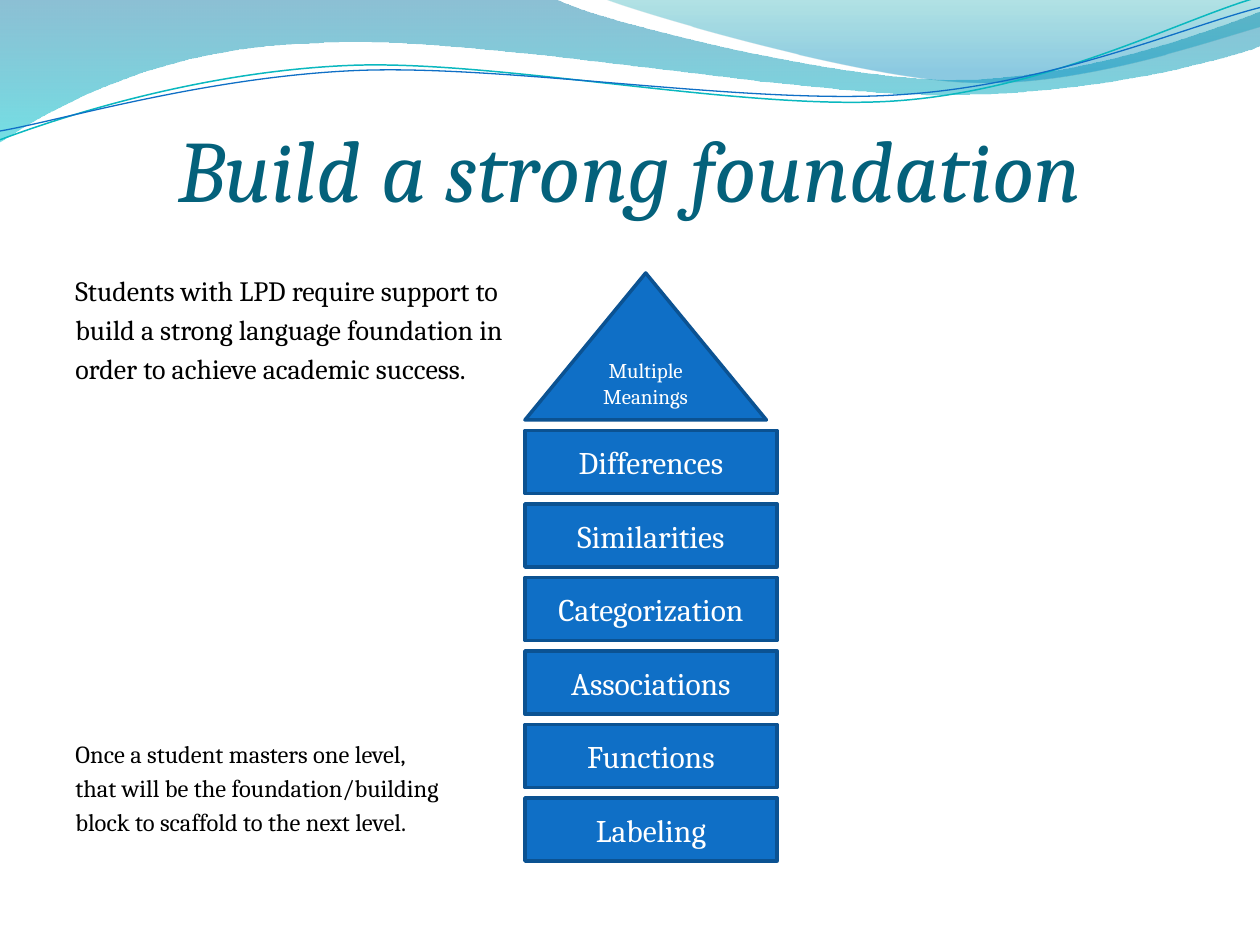
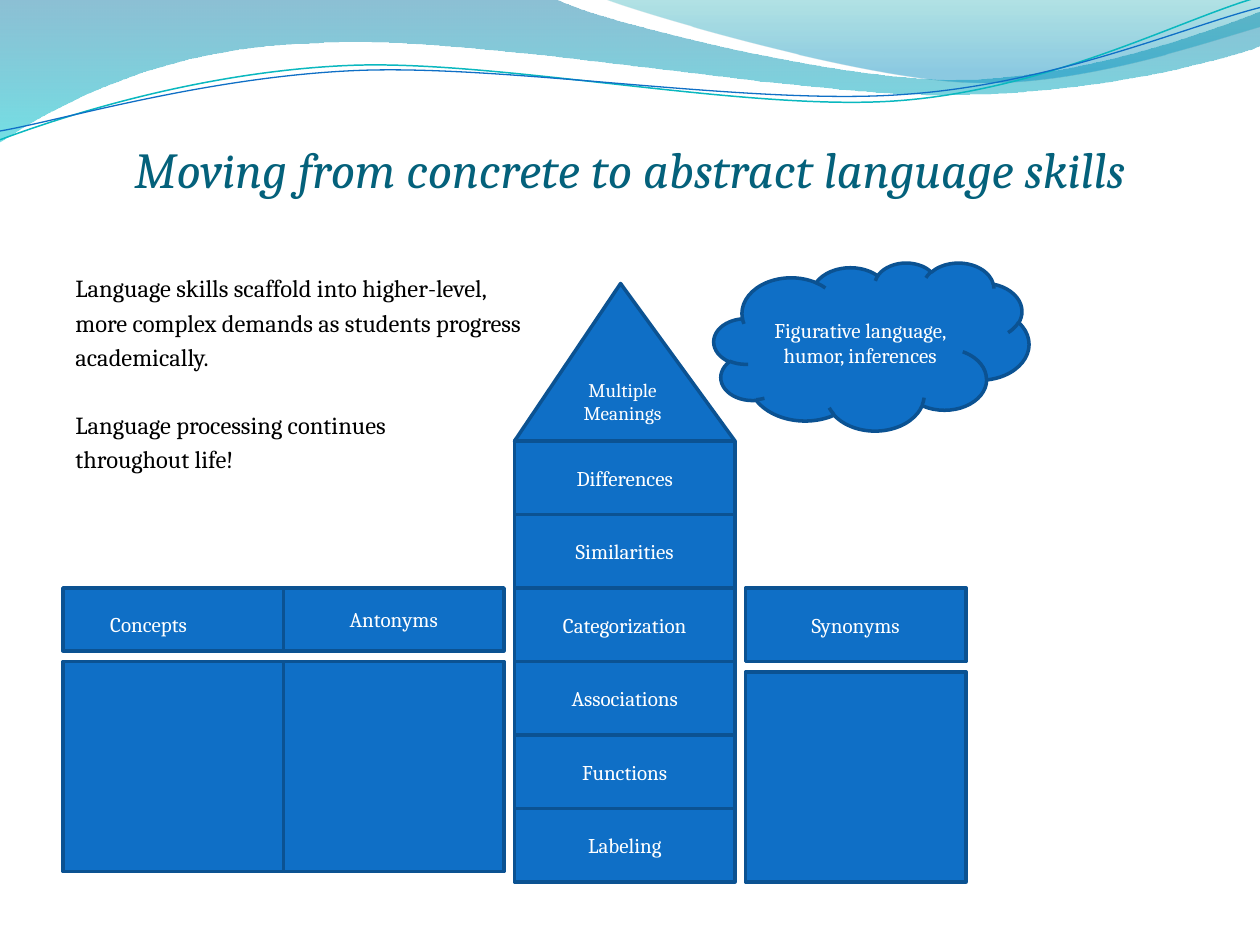
from pptx import Presentation
from pptx.dml.color import RGBColor
from pptx.enum.shapes import MSO_SHAPE
from pptx.enum.text import MSO_ANCHOR, PP_ALIGN
from pptx.oxml.ns import qn
from pptx.util import Inches, Pt
from lxml.etree import SubElement

COLORS = {
    "title": "04617B", "text": "000000", "label": "FFFFFF",
    "block": "0F6FC6", "edge": "0B5292",
    "band_top": "0074A1", "band_end": "00C6CF",
    "crest_top": "00A1A9", "crest_end": "008BBF",
    "teal_wave": "0AB8BF", "blue_wave": "0F6FC6",
}
FONT = "Cambria"
SLIDE_W, SLIDE_H = Inches(10), Inches(7.5)
CELL = SLIDE_W // 120  # the grid has 120 columns and 90 rows
LEVELS = ["Differences", "Similarities", "Categorization",
          "Associations", "Functions", "Labeling"]

# Outlines in inches: a start point, then lines (2 numbers) and cubic curves (6)
BAND = [(0, 0), (4.4, -0.01), (4.76, 0.17, 6.64, 0.63, 7.58, 0.63),
        (8.53, 0.63, 9.58, 0.26, 10, 0.09), (10.01, 0.36),
        (9.83, 0.44, 8.7, 0.76, 7.46, 0.75), (6.22, 0.75, 3.82, 0.28, 2.57, 0.34),
        (1.29, 0.36, 0.46, 0.83, -0.01, 1.13)]
CREST = [(4.79, -0.01), (5.09, 0.11, 6.82, 0.62, 7.69, 0.65),
         (8.56, 0.69, 9.61, 0.32, 10, 0.21), (10, 0)]
TEAL_WAVE = [(0, 1.11), (0.48, 0.93, 1.58, 0.57, 2.77, 0.52),
             (3.95, 0.47, 5.93, 0.89, 7.13, 0.8), (8.33, 0.71, 9.38, 0.15, 9.98, -0.02)]
BLUE_WAVE = [(0, 1.04), (0.47, 0.96, 1.64, 0.61, 2.83, 0.56),
             (4.03, 0.51, 5.97, 0.84, 7.17, 0.75), (8.36, 0.67, 9.41, 0.21, 10, 0.06)]


def rgb(name):
    return RGBColor.from_string(COLORS[name])


def cells(*counts):
    return [round(count * CELL) for count in counts]


def style(paragraph, size, color, align=PP_ALIGN.LEFT):
    paragraph.alignment = align
    paragraph.font.name = FONT
    paragraph.font.size = Pt(size)
    paragraph.font.color.rgb = rgb(color)


# Header waves
def add_outline(slide, outline, close):
    start, *rest = [(Inches(x), Inches(y)) for segment in outline
                    for x, y in zip(segment[::2], segment[1::2])]
    builder = slide.shapes.build_freeform(*start)
    builder.add_line_segments(rest, close=close)
    shape = builder.convert_to_shape()
    shape.shadow.inherit = False
    # Merge each curve's three straight steps into one cubic curve
    steps = iter(list(shape._element.spPr.iter(qn("a:lnTo"))))
    for segment in outline[1:]:
        curve = next(steps)
        if len(segment) == 6:
            curve.tag = qn("a:cubicBezTo")
            for step in (next(steps), next(steps)):
                curve.append(step[0])
                step.getparent().remove(step)
    return shape


def add_veil(slide, outline, stops):
    """Add an area with a downward gradient of (position, colour, opacity %)."""
    veil = add_outline(slide, outline, close=True)
    veil.line.fill.background()
    veil.fill.gradient()
    veil.fill.gradient_angle = 270
    for stop, (position, color, _) in zip(veil.fill.gradient_stops, stops):
        stop.position = position
        stop.color.rgb = rgb(color)
    tints = list(veil._element.spPr.iter(qn("a:srgbClr")))
    for tint, (_, _, opacity) in zip(tints, stops):
        SubElement(tint, qn("a:alpha"), val=str(opacity * 1000))
    return veil


def add_wave(slide, outline, color, weight):
    wave = add_outline(slide, outline, close=False)
    wave.fill.background()
    wave.line.color.rgb = rgb(color)
    wave.line.width = Pt(weight)
    return wave


def put_header_on_master(slide):
    """Draw the header once and hand it to the master, so all slides share it."""
    parts = [
        add_veil(slide, BAND, [(0, "band_top", 45), (1, "band_end", 55)]),
        add_veil(slide, CREST, [(0, "crest_top", 30), (0.8, "crest_end", 45)]),
        add_wave(slide, TEAL_WAVE, "teal_wave", 0.85),
        add_wave(slide, BLUE_WAVE, "blue_wave", 0.75),
    ]
    for part in parts:
        slide.slide_layout.slide_master.shapes._spTree.append(part._element)


# Titles and notes
def set_title(slide, text, size, height):
    title = slide.shapes.title
    title.left, title.top = Inches(0.5), Inches(0.77)
    title.width, title.height = Inches(9), Inches(height)
    frame = title.text_frame
    frame.text = text
    frame.word_wrap = True
    frame.vertical_anchor = MSO_ANCHOR.BOTTOM
    frame.margin_left = frame.margin_right = frame.margin_bottom = 0
    frame.margin_top = Inches(0.05)
    style(frame.paragraphs[0], size, "title", PP_ALIGN.CENTER)
    frame.paragraphs[0].font.italic = True


def add_notes(slide, height, gap, *notes):
    """Write notes of (size, lines) in one box, with a gap in points between them."""
    box = slide.shapes.add_textbox(Inches(0.5), Inches(2.12), Inches(9), Inches(height))
    frame = box.text_frame
    frame.word_wrap = True
    frame.text = "\n".join(line for _, lines in notes for line in lines)
    paragraphs = iter(frame.paragraphs)
    for number, (size, lines) in enumerate(notes):
        for row in range(len(lines)):
            paragraph = next(paragraphs)
            style(paragraph, size, "text")
            paragraph.space_before = Pt(gap if number and not row else size * 0.2)


# Building blocks
def add_block(slide, box, text="", size=12, kind=MSO_SHAPE.RECTANGLE):
    """Add a block whose box is (left, top, width, height) in grid cells."""
    block = slide.shapes.add_shape(kind, *cells(*box))
    block.shadow.inherit = False
    block.fill.solid()
    block.fill.fore_color.rgb = rgb("block")
    block.line.color.rgb = rgb("edge")
    block.line.width = Pt(2)
    if text:
        block.text_frame.text = text
        for line in block.text_frame.paragraphs:
            style(line, size, "label", PP_ALIGN.CENTER)
    return block


def add_tower(slide, box, roof, gap, size, roof_size, kind):
    """Stack the levels under a roof of (width, height)."""
    left, top, width, height = box
    roof_width, roof_height = roof
    first = top + roof_height + gap
    pitch = (top + height - first + gap) / len(LEVELS)
    for row, level in reversed(list(enumerate(LEVELS))):
        add_block(slide, (left, first + row * pitch, width, pitch - gap),
                  level, size, kind)
    return add_block(slide, (left, top, roof_width, roof_height),
                     "Multiple\nMeanings", roof_size, MSO_SHAPE.ISOSCELES_TRIANGLE)


def add_wing(slide, box, head_height, text):
    """Add a headed wing: a label block above a plain block, one cell apart."""
    left, top, width, height = box
    body_top = top + head_height + 1
    add_block(slide, (left, body_top, width, top + height - body_top))
    return add_block(slide, (left, top, width, head_height), text)


# Slides
def fill_foundation(slide):
    set_title(slide, "Build a strong foundation", 50, 0.98)
    add_notes(slide, 4.8, 202,
              (16, ["Students with LPD require support to",
                    "build a strong language foundation in",
                    "order to achieve academic success."]),
              (14, ["Once a student masters one level,",
                    "that will be the foundation/building",
                    "block to scaffold to the next level."]))
    add_tower(slide, (50, 26, 24, 56), roof=(23, 14), gap=1, size=18, roof_size=12,
              kind=MSO_SHAPE.FLOWCHART_PROCESS)


def fill_language_skills(slide):
    set_title(slide, "Moving from concrete to abstract language skills", 28.8, 0.81)
    add_notes(slide, 5.05, 22,
              (14, ["Language skills scaffold into higher-level,",
                    "more complex demands as students progress",
                    "academically."]),
              (14, ["Language processing continues", "throughout life!"]))
    roof = add_tower(slide, (49, 27, 21, 57), roof=(21, 15), gap=0, size=12,
                     roof_size=11, kind=MSO_SHAPE.RECTANGLE)
    roof.adjustments[0] = 0.481
    add_wing(slide, (27, 56, 21, 27), 6, "Antonyms")
    concepts = add_wing(slide, (6, 56, 21, 27), 6, "Concepts")
    concepts.text_frame.margin_right = Inches(0.49)
    concepts.text_frame.margin_top = Inches(0.13)
    add_wing(slide, (71, 56, 21, 28), 7, "Synonyms")
    add_block(slide, (68, 25, 30, 16), "Figurative language, humor, inferences",
              kind=MSO_SHAPE.CLOUD)


def main():
    deck = Presentation()
    deck.slide_width, deck.slide_height = SLIDE_W, SLIDE_H
    title_only = deck.slide_layouts[5]
    foundation, language_skills = [deck.slides.add_slide(title_only) for _ in range(2)]
    put_header_on_master(foundation)
    fill_foundation(foundation)
    fill_language_skills(language_skills)
    deck.save("out.pptx")


if __name__ == "__main__":
    main()
